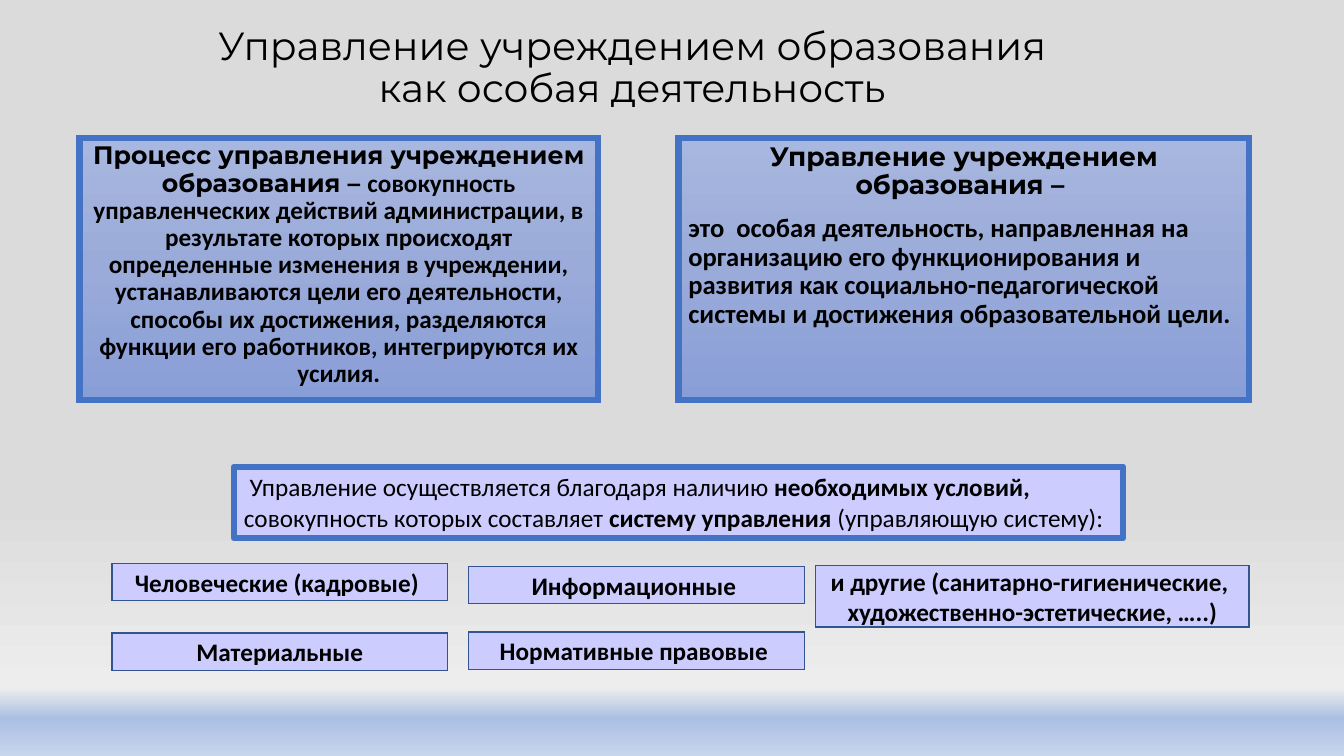
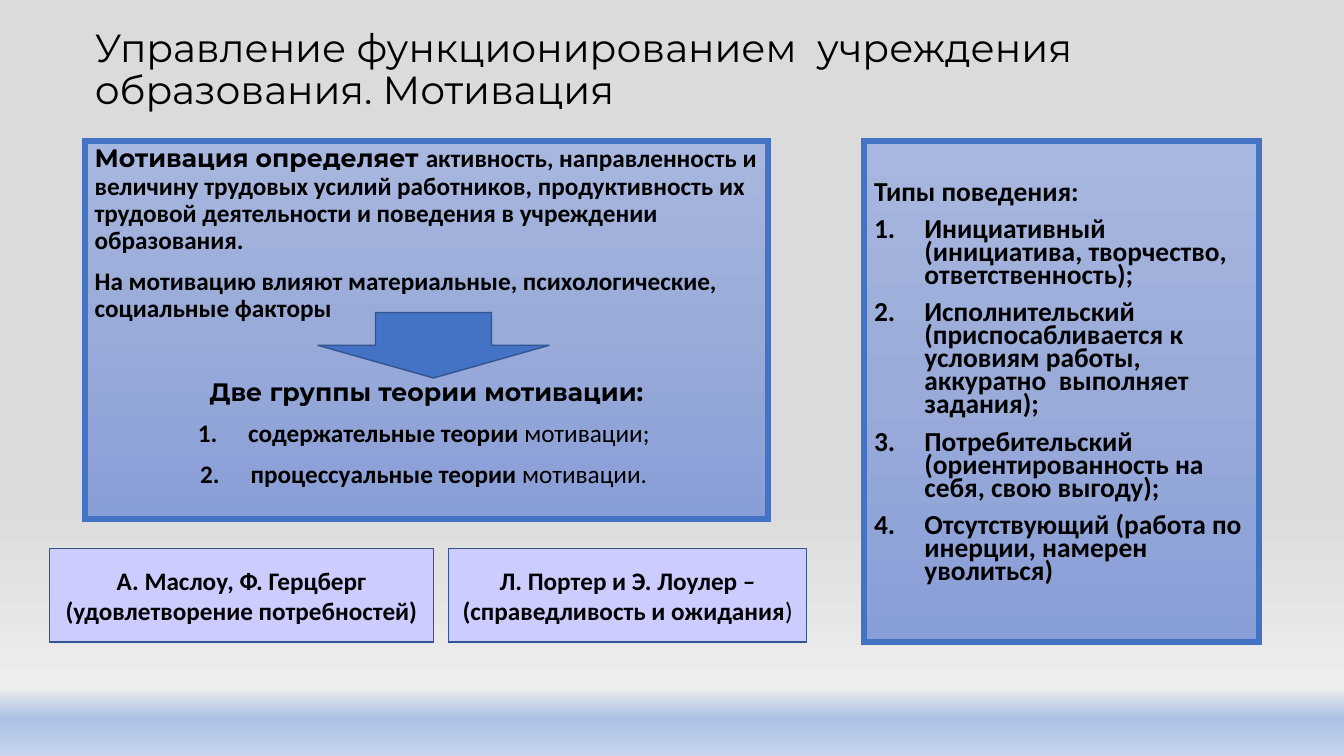
from lxml.etree import SubElement
from pptx import Presentation
from pptx.dml.color import RGBColor
from pptx.enum.shapes import MSO_SHAPE
from pptx.enum.text import MSO_ANCHOR, MSO_AUTO_SIZE, PP_ALIGN
from pptx.oxml.ns import qn
from pptx.util import Inches, Pt

BLACK = RGBColor(0x00, 0x00, 0x00)
BLUE = RGBColor(0x44, 0x72, 0xC4)
DARK_BLUE = RGBColor(0x32, 0x54, 0x91)
LILAC = RGBColor(0xCC, 0xCC, 0xFF)
PANEL_STOPS = [
    (0, RGBColor(0xA8, 0xB7, 0xDF)),
    (50, RGBColor(0x9A, 0xAB, 0xD9)),
    (100, RGBColor(0x88, 0x9E, 0xD7)),
]
PAGE_STOPS = [
    (66, RGBColor(0xDB, 0xDB, 0xDB)),
    (91, RGBColor(0xED, 0xED, 0xED)),
    (95, RGBColor(0xAB, 0xC0, 0xE4)),
    (100, RGBColor(0xC7, 0xD5, 0xED)),
]

HEAD_FONT, BODY_FONT = "Montserrat", "Calibri"
HEAD = {"name": HEAD_FONT}
PLAIN = {"bold": False}
LEFT, CENTER = PP_ALIGN.LEFT, PP_ALIGN.CENTER


def set_gradient(fill, element, stops):
    """Fill with a top-to-bottom gradient made of the given stops."""
    fill.gradient()
    fill.gradient_angle = 270
    gs_list = element.find(".//" + qn("a:gsLst"))
    for gs in list(gs_list):
        gs_list.remove(gs)
    for pos, color in stops:
        gs = SubElement(gs_list, qn("a:gs"), pos=str(pos * 1000))
        SubElement(gs, qn("a:srgbClr"), val=str(color))


def set_master(prs):
    """Give the master the page gradient and the title style."""
    master = prs.slide_master
    set_gradient(master.background.fill, master.element, PAGE_STOPS)
    style = master.element.find(".//" + qn("p:titleStyle"))
    font = style.find(qn("a:lvl1pPr")).find(qn("a:defRPr"))
    font.set("sz", "2800")
    font.find(qn("a:latin")).set("typeface", HEAD_FONT)


def add_title_slide(prs, text, box, align):
    """Add a title-only slide with its title set in the box."""
    s = prs.slides.add_slide(prs.slide_layouts[5])
    title = s.shapes.title
    title.left, title.top, title.width, title.height = map(Inches, box)
    tf = title.text_frame
    tf.text = text
    for key, value in {"word_wrap": True, "auto_size": MSO_AUTO_SIZE.NONE,
                       "vertical_anchor": MSO_ANCHOR.MIDDLE}.items():
        setattr(tf, key, value)
    for p in tf.paragraphs:
        p.alignment, p.line_spacing = align, 0.9
    return s


def para(*runs, align=LEFT, before=10, numbered=False):
    """Describe a paragraph; a run is a text or a text with its format."""
    pairs = [(run, {}) if isinstance(run, str) else run for run in runs]
    return {"runs": pairs, "align": align, "before": before, "numbered": numbered}


def add_paragraphs(tf, paras, size, spacing, bold=True):
    """Write the described paragraphs into the text frame."""
    for i, item in enumerate(paras):
        p = tf.paragraphs[0] if i == 0 else tf.add_paragraph()
        for key, value in {"alignment": item["align"], "line_spacing": spacing,
                           "space_before": Pt(item["before"])}.items():
            setattr(p, key, value)
        if item["numbered"]:
            pPr = p._p.get_or_add_pPr()
            pPr.set("marL", str(Inches(0.5)))
            pPr.set("indent", str(-Inches(0.5)))
            SubElement(pPr, qn("a:buAutoNum"), type="arabicPeriod")
        for text, changes in item["runs"]:
            r = p.add_run()
            r.text = text
            r.font.color.rgb = BLACK
            base = {"name": BODY_FONT, "size": Pt(size), "bold": bold}
            for key, value in {**base, **changes}.items():
                setattr(r.font, key, value)


def add_block(s, box, fill, line, width, kind=MSO_SHAPE.RECTANGLE, join="miter"):
    """Add an outlined shape; a list of stops as fill makes a gradient."""
    sp = s.shapes.add_shape(kind, *map(Inches, box))
    sp.shadow.inherit = False
    if isinstance(fill, list):
        set_gradient(sp.fill, sp._element, fill)
    else:
        sp.fill.solid()
        sp.fill.fore_color.rgb = fill
    sp.line.color.rgb = line
    sp.line.width = Pt(width)
    SubElement(sp.line._get_or_add_ln(), qn("a:" + join))
    sp.text_frame.word_wrap = True
    return sp


def add_panel(s, box, paras, size=18, spacing=0.9, top=0.05):
    """Add a large gradient panel with text from its top."""
    tf = add_block(s, box, PANEL_STOPS, BLUE, 4.5).text_frame
    tf.vertical_anchor = MSO_ANCHOR.TOP
    tf.margin_top = Inches(top)
    add_paragraphs(tf, paras, size, spacing)


def add_banner(s, box, *runs):
    """Add a lilac banner with a thick frame."""
    tf = add_block(s, box, LILAC, BLUE, 4.5, join="round").text_frame
    tf.vertical_anchor = MSO_ANCHOR.TOP
    add_paragraphs(tf, [para(*runs, before=0)], 18, 1.0, bold=False)


def add_label(s, box, *runs):
    """Add a lilac label with centred bold text."""
    tf = add_block(s, box, LILAC, DARK_BLUE, 1).text_frame
    tf.vertical_anchor = MSO_ANCHOR.MIDDLE
    add_paragraphs(tf, [para(*runs, align=CENTER, before=0)], 18, 1.0)


def management_slide(prs):
    """Build the slide on management as a special activity."""
    s = add_title_slide(
        prs, "Управление учреждением образования \vкак особая деятельность ",
        (0.64, 0.27, 11.36, 0.83), CENTER)
    top, height = 1.37, 2.6
    add_panel(s, (0.79, top, 5.14, height), [para(
        ("Процесс управления учреждением образования – ", HEAD),
        "совокупность управленческих действий администрации, в результате "
        "которых происходят определенные изменения в учреждении, "
        "устанавливаются цели его деятельности, способы их достижения, "
        "разделяются функции его работников, интегрируются их усилия.",
        align=CENTER)])
    add_panel(s, (6.73, top, 5.66, height), [
        para(("Управление учреждением образования – ", HEAD), align=CENTER),
        para("это  особая деятельность, направленная на организацию его "
             "функционирования и развития как социально-педагогической "
             "системы и достижения образовательной цели."),
    ], size=19)
    strong = {"bold": True}
    add_banner(s, (2.32, 4.63, 8.82, 0.71),
               " Управление осуществляется благодаря наличию ",
               ("необходимых условий, ", strong),
               "совокупность которых составляет ",
               ("систему управления", strong),
               " (управляющую систему):")
    for left, y, text in [
        (1.11, 5.59, "Человеческие (кадровые) "),
        (1.11, 6.28, "Материальные"),
        (4.65, 5.62, "Информационные "),
        (4.65, 6.27, "Нормативные правовые "),
    ]:
        add_label(s, (left, y, 3.33, 0.37), text)
    add_label(s, (8.09, 5.61, 4.3, 0.61),
              "и другие (санитарно-гигиенические,  "
              "художественно-эстетические, …..)")


def motivation_slide(prs):
    """Build the slide on motivation and types of behaviour."""
    s = add_title_slide(
        prs, "Управление функционированием  учреждения образования. Мотивация",
        (0.84, 0.31, 11.65, 0.78), LEFT)
    top = 1.4
    add_panel(s, (0.84, top, 6.78, 3.75), [
        para(("Мотивация определяет ", HEAD),
             "активность, направленность и величину трудовых усилий "
             "работников, продуктивность их трудовой деятельности и "
             "поведения в учреждении образования."),
        para("На мотивацию влияют материальные, психологические, "
             "социальные факторы"),
        para(("Две группы теории мотивации:", HEAD), align=CENTER, before=40),
        para("содержательные теории ", ("мотивации; ", PLAIN),
             align=CENTER, numbered=True),
        para("процессуальные теории", (" мотивации. ", PLAIN),
             align=CENTER, numbered=True),
    ])
    behaviours = [
        "Инициативный (инициатива, творчество, ответственность);",
        "Исполнительский (приспосабливается к условиям работы, "
        "аккуратно  выполняет задания);",
        "Потребительский (ориентированность на себя, свою выгоду);",
        "Отсутствующий (работа по инерции, намерен уволиться)",
    ]
    add_panel(s, (8.57, top, 3.92, 4.97),
              [para("Типы поведения:")]
              + [para(text, numbered=True) for text in behaviours],
              size=19.6, spacing=0.7, top=0.42)
    add_block(s, (3.15, 3.1, 2.3, 0.65), BLUE, DARK_BLUE, 1,
              kind=MSO_SHAPE.DOWN_ARROW)
    add_label(s, (0.49, 5.44, 3.81, 0.93),
              "А. Маслоу, Ф. Герцберг (удовлетворение потребностей)")
    add_label(s, (4.45, 5.44, 3.55, 0.93),
              "Л. Портер и Э. Лоулер – (справедливость и ожидания",
              (")", PLAIN))


def main():
    """Build the presentation and save it."""
    prs = Presentation()
    prs.slide_width, prs.slide_height = Inches(13.33), Inches(7.5)
    set_master(prs)
    management_slide(prs)
    motivation_slide(prs)
    prs.save("out.pptx")


if __name__ == "__main__":
    main()
